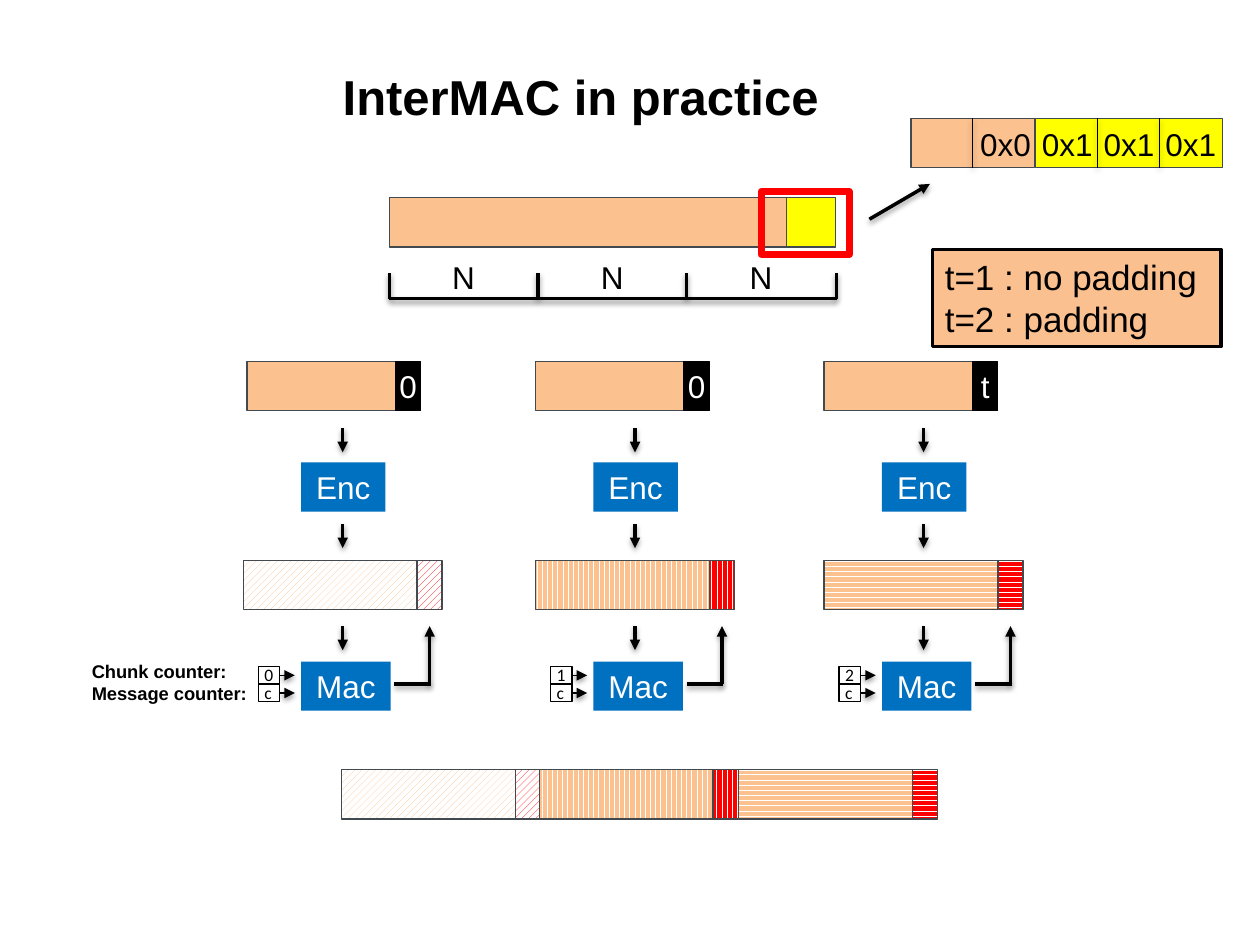
from lxml import etree
from pptx import Presentation
from pptx import util as u
from pptx.dml.color import RGBColor
from pptx.enum import dml, shapes, text
from pptx.oxml.ns import qn

PX = 9144  # one px is a hundredth of an inch
COLORS = {
    "ink": "000000", "paper": "FFFFFF", "data": "FBC18F", "note": "FAC090",
    "padding": "FFFF00", "tag": "FF0000", "block": "0070C0", "edge": "424A4F",
}
ROW_H, DATA_W, CHUNK_W, TAG_W = 39, 138, 118, 20
DIAGONAL = dml.MSO_PATTERN.WIDE_UPWARD_DIAGONAL
VERTICAL = dml.MSO_PATTERN.DARK_VERTICAL
HORIZONTAL = dml.MSO_PATTERN.DARK_HORIZONTAL


def px(*lengths):
    return [u.Emu(length * PX) for length in lengths]


def rgb(name):
    return RGBColor.from_string(COLORS[name])


def write(shape, words, size=18, color="ink", font="Arial", bold=False,
          align="LEFT", anchor="TOP", wrap=True, grow=False, inset=None):
    frame = shape.text_frame
    frame.text = words
    frame.word_wrap = wrap
    frame.vertical_anchor = text.MSO_ANCHOR[anchor]
    if grow:
        frame.auto_size = text.MSO_AUTO_SIZE.SHAPE_TO_FIT_TEXT
    if inset is not None:
        frame.margin_left = frame.margin_right = u.Emu(inset * PX)
    for paragraph in frame.paragraphs:
        paragraph.alignment = text.PP_ALIGN[align]
        paragraph.font.size = u.Pt(size)
        paragraph.font.bold = bold
        paragraph.font.name = font
        paragraph.font.color.rgb = rgb(color)


class Diagram:
    def __init__(self, slide):
        self.slide = slide

    def title(self, words, *box):
        title = self.slide.shapes.title
        title.left, title.top, title.width, title.height = px(*box)
        write(title, words, size=28, bold=True, wrap=False, grow=True)

    def label(self, words, *box, **style):
        write(self.slide.shapes.add_textbox(*px(*box)), words, grow=True, **style)

    def box(self, *box, fill=None, pattern=None, line="edge", weight=0.75):
        shape = self.slide.shapes.add_shape(shapes.MSO_SHAPE.RECTANGLE, *px(*box))
        shape.shadow.inherit = False
        if pattern is not None:
            shape.fill.patterned()
            shape.fill.pattern = pattern
            shape.fill.fore_color.rgb = rgb(fill)
            shape.fill.back_color.rgb = rgb("paper")
        elif fill:
            shape.fill.solid()
            shape.fill.fore_color.rgb = rgb(fill)
        else:
            shape.fill.background()
        if line:
            shape.line.color.rgb = rgb(line)
            shape.line.width = u.Pt(weight)
        else:
            shape.line.fill.background()
        return shape

    def block(self, words, *box, fill="block", line=None):
        shape = self.box(*box, fill=fill, line=line)
        write(shape, words, color="paper", align="CENTER", anchor="MIDDLE",
              wrap=False, inset=0)

    def line(self, *ends, weight=2, arrow=False):
        line = self.slide.shapes.add_connector(
            shapes.MSO_CONNECTOR.STRAIGHT, *px(*ends))
        line.line.color.rgb = rgb("ink")
        line.line.width = u.Pt(weight)
        if arrow:
            etree.SubElement(line.line._get_or_add_ln(), qn("a:tailEnd"),
                             type="triangle")
        # Soft shadow straight below the line
        effects = etree.SubElement(line._element.spPr, qn("a:effectLst"))
        shadow = etree.SubElement(
            effects, qn("a:outerShdw"), blurRad=str(u.Pt(3.1)),
            dist=str(u.Pt(1.6)), dir="5400000", rotWithShape="0")
        color = etree.SubElement(shadow, qn("a:srgbClr"), val=COLORS["ink"])
        etree.SubElement(color, qn("a:alpha"), val="38000")
        return line

    def ciphertext(self, left, top, pattern):
        self.box(left, top, DATA_W, ROW_H, fill="data", pattern=pattern)
        self.box(left + DATA_W, top, TAG_W, ROW_H, fill="tag", pattern=pattern)

    def counter(self, words, left, top):
        cell = self.box(left, top, 17, 14, line="ink")
        self.label(words, left - 5, top - 7, 22, 27, size=10, font="Calibri")
        arrow = self.line(left + 17, top + 7, left + 29, top + 7,
                          weight=0.75, arrow=True)
        arrow.begin_connect(cell, 3)

    def pipeline(self, center, chunk_left, flag, index, pattern):
        """One chunk: plaintext, encryption, ciphertext, MAC."""
        self.box(chunk_left, 287, CHUNK_W, ROW_H, fill="data")
        self.block(flag, chunk_left + CHUNK_W, 287, TAG_W, ROW_H,
                   fill="ink", line="ink")
        for top in (340, 416, 497):
            self.line(center, top, center, top + 19, arrow=True)
        self.block("Enc", center - 33, 367, 67, ROW_H)
        self.ciphertext(center - 79, 445, pattern)
        self.counter(str(index), center - 67, 529)
        self.counter("c", center - 67, 543)
        self.block("Mac", center - 33, 525, 71, ROW_H)
        # The tag goes back up to the ciphertext
        self.line(center + 41, 543, center + 70, 543)
        self.line(center + 69, 543, center + 69, 497, arrow=True)


def main():
    deck = Presentation()
    deck.slide_width, deck.slide_height = px(1000, 750)
    diagram = Diagram(deck.slides.add_slide(deck.slide_layouts[5]))
    diagram.title("InterMAC in practice", 262, 48, 403, 57)

    # Padded message
    diagram.box(309, 157, 315, ROW_H, fill="data")
    diagram.box(624, 157, ROW_H, ROW_H, fill="padding")

    # Ruler of chunk lengths
    ticks = (309, 427, 545, 664)
    diagram.line(ticks[0], 237, ticks[-1], 237)
    for tick in ticks:
        diagram.line(tick, 217, tick, 237)
    for tick in ticks[:-1]:
        diagram.label("N", tick + 40, 200, 38, 40, wrap=False)

    # Chunk pipelines and the joined ciphertext
    chunks = (
        (272, 196, "0", DIAGONAL, 271),
        (504, 425, "0", VERTICAL, 428),
        (733, 654, "t", HORIZONTAL, 586),
    )
    for index, (center, chunk_left, flag, pattern, joined_left) in enumerate(chunks):
        diagram.pipeline(center, chunk_left, flag, index, pattern)
        diagram.ciphertext(joined_left, 611, pattern)
    diagram.label("Chunk counter:\nMessage counter:", 63, 519, 151, 47,
                  size=10.5, bold=True)

    # Meaning of the flag t
    note = diagram.box(740, 198, 229, 77, fill="note", line="ink", weight=2)
    write(note, "t=1 : no padding\nt=2 : padding", size=20, grow=True)

    # Close-up of the padding bytes
    diagram.box(604, 152, 70, 50, line="tag", weight=4)
    diagram.line(690, 174, 738, 146, arrow=True)
    data_bytes = diagram.box(723, 94, 98, ROW_H, fill="data")
    diagram.box(822, 94, 148, ROW_H, fill="padding")
    divider = diagram.line(772, 94, 772, 133, weight=0.5)
    divider.begin_connect(data_bytes, 0)
    divider.end_connect(data_bytes, 2)
    for left in (871, 920):
        diagram.line(left, 94, left, 133, weight=0.5)
    for column, byte in enumerate(("0x0", "0x1", "0x1", "0x1")):
        diagram.label(byte, 768 + 49 * column, 94, 61, 40, wrap=False)

    deck.save("out.pptx")


if __name__ == "__main__":
    main()
